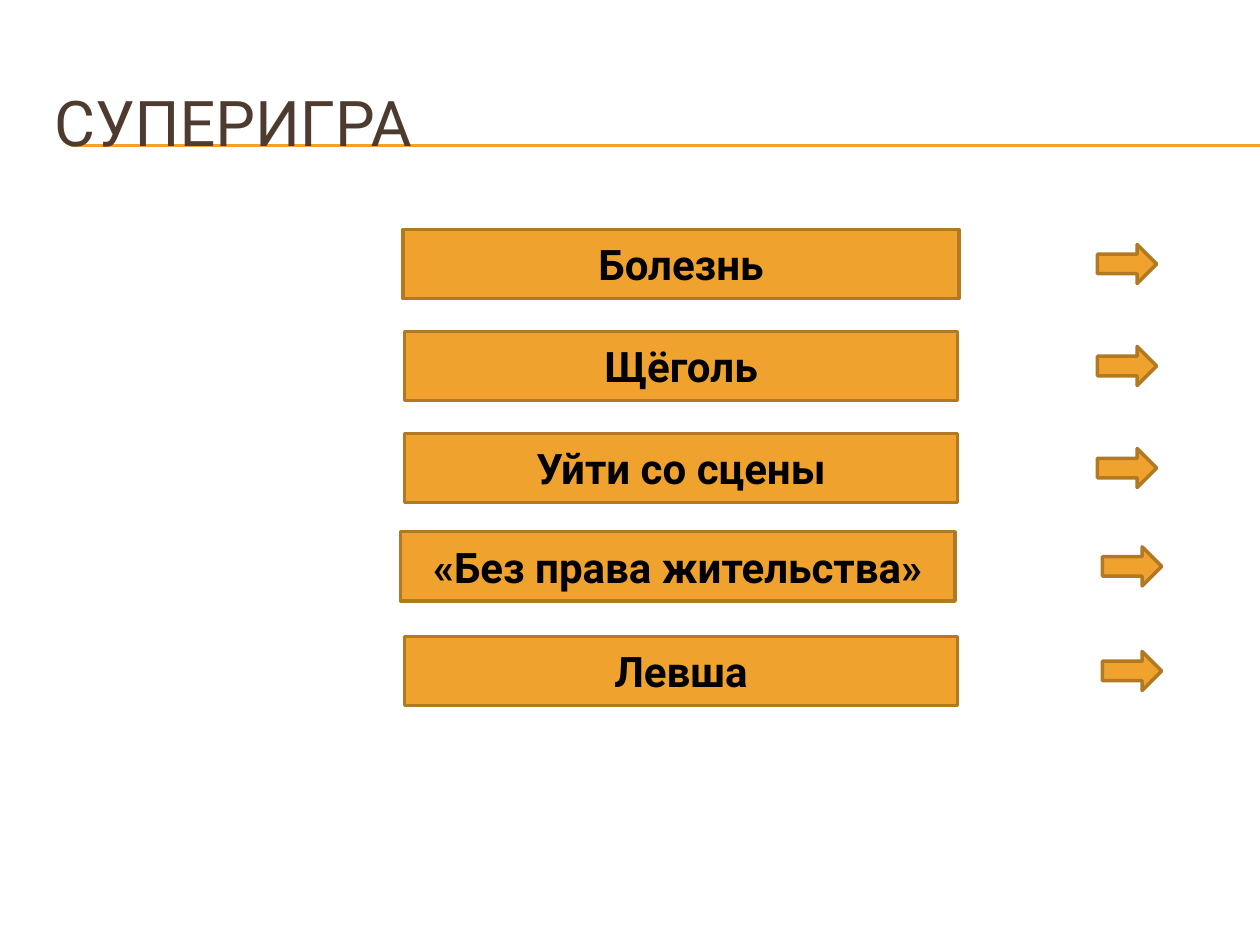
"""Builds the «СУПЕРИГРА» slide: a title over a rule and five answers with arrows."""
from lxml import etree
from pptx import Presentation
from pptx.dml.color import RGBColor
from pptx.enum import shapes, text
from pptx.oxml.ns import qn
from pptx.util import Inches, Pt


def color(value):
    return RGBColor.from_string(value)


def write(shape, words, size, fill, bold=False, align=text.PP_ALIGN.CENTER):
    frame = shape.text_frame
    frame.word_wrap = True
    frame.auto_size = text.MSO_AUTO_SIZE.NONE
    frame.vertical_anchor = text.MSO_ANCHOR.MIDDLE
    paragraph = frame.paragraphs[0]
    paragraph.alignment = align
    run = paragraph.add_run()
    run.text = words
    run.font.name = "Roboto"
    run.font.size = Pt(size)
    run.font.bold = bold
    run.font.color.rgb = color(fill)


ORANGE, BROWN = "F0A22E", "B27822"

prs = Presentation()
prs.slide_width, prs.slide_height = Inches(10), Inches(7.5)
slide = prs.slides.add_slide(prs.slide_layouts[5])

for y in (1.15, 1.16):
    rule = slide.shapes.add_connector(
        shapes.MSO_CONNECTOR.STRAIGHT, Inches(0.56), Inches(y), Inches(10), Inches(y))
    rule.line.color.rgb = color(ORANGE)
    rule.line.width = Pt(0.75)
    etree.SubElement(rule._element.spPr, qn("a:effectLst"))

title = slide.shapes.title
title.left, title.top = Inches(0.33), Inches(0.5)
title.width, title.height = Inches(9.5), Inches(0.92)
write(title, "СУПЕРИГРА", 36, "4E3B30", align=text.PP_ALIGN.LEFT)
slide.shapes._spTree.append(title._element)

answers = [
    ("Болезнь", 3.2, 1.82, 4.41, 8.71),
    ("Щёголь", 3.21, 2.63, 4.39, 8.71),
    ("Уйти со сцены", 3.21, 3.44, 4.39, 8.71),
    ("«Без права жительства»", 3.18, 4.22, 4.4, 8.75),
    ("Левша", 3.21, 5.05, 4.39, 8.75),
]
for answer, left, top, width, arrow_left in answers:
    arrow = slide.shapes.add_shape(
        shapes.MSO_SHAPE.RIGHT_ARROW,
        Inches(arrow_left), Inches(top + 0.12), Inches(0.47), Inches(0.31))
    bar = slide.shapes.add_shape(
        shapes.MSO_SHAPE.RECTANGLE, Inches(left), Inches(top), Inches(width), Inches(0.55))
    for part in (arrow, bar):
        part.shadow.inherit = False
        part.fill.solid()
        part.fill.fore_color.rgb = color(ORANGE)
        part.line.color.rgb = color(BROWN)
        part.line.width = Pt(2)
    write(bar, answer, 24, "000000", bold=True)

prs.save("out.pptx")
